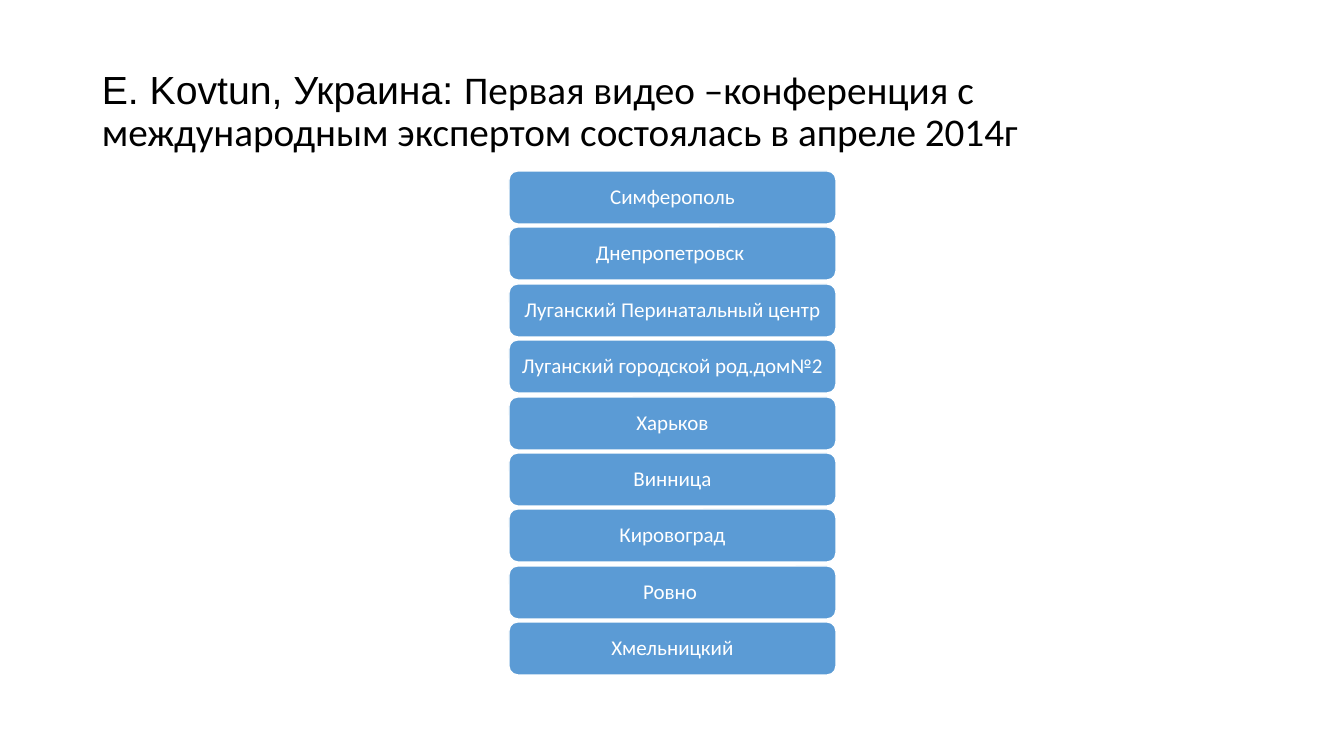
from dataclasses import dataclass

from pptx import Presentation
from pptx.dml.color import RGBColor
from pptx.enum.shapes import MSO_SHAPE
from pptx.enum.text import MSO_ANCHOR as Anchor, PP_ALIGN as Align
from pptx.util import Emu, Pt

PX_PER_INCH = 100.8
BLACK, WHITE, BLUE = "000000", "FFFFFF", "5B9BD5"

# Stack of city bars: the first and last tops fix the spacing
BAR_LEFT, BAR_WIDTH, BAR_HEIGHT = 509, 327, 53
FIRST_TOP, LAST_TOP = 171, 622

CITIES = [
    "Симферополь",
    "Днепропетровск ",
    "Луганский Перинатальный центр",
    "Луганский городской род.дом№2",
    "Харьков",
    "Винница",
    "Кировоград",
    "Ровно ",
    "Хмельницкий",
]


@dataclass
class Span:
    text: str
    font: str
    size: int
    color: str


@dataclass
class CityBar:
    label: str
    top: int


TITLE = [
    Span("E. Kovtun, Украина: ", "Arial", 28, BLACK),
    Span("Первая видео –конференция с международным экспертом "
         "состоялась в апреле 2014г", "Calibri", 28, BLACK),
]


def px(length: int) -> Emu:
    return Emu(round(length * 914400 / PX_PER_INCH))


def rgb(code: str) -> RGBColor:
    return RGBColor.from_string(code)


def write(frame, spans: list[Span], align: Align) -> None:
    frame.word_wrap = True
    frame.vertical_anchor = Anchor.MIDDLE
    para = frame.paragraphs[0]
    para.alignment = align
    para.line_spacing = 0.9
    for span in spans:
        run = para.add_run()
        run.text = span.text
        run.font.name = span.font
        run.font.size = Pt(span.size)
        run.font.color.rgb = rgb(span.color)


def draw_title(page) -> None:
    box = page.shapes.add_textbox(px(92), px(40), px(1159), px(146))
    write(box.text_frame, TITLE, Align.LEFT)


def draw_bar(page, bar: CityBar) -> None:
    box = page.shapes.add_shape(MSO_SHAPE.ROUNDED_RECTANGLE, px(BAR_LEFT),
                                px(bar.top), px(BAR_WIDTH), px(BAR_HEIGHT))
    box.shadow.inherit = False
    box.fill.solid()
    box.fill.fore_color.rgb = rgb(BLUE)
    box.line.color.rgb = rgb(WHITE)
    box.line.width = Pt(1)
    frame = box.text_frame
    frame.margin_left = frame.margin_right = px(6)
    frame.margin_top = frame.margin_bottom = px(3)
    write(frame, [Span(bar.label, "Calibri", 15, WHITE)], Align.CENTER)


def main() -> None:
    deck = Presentation()
    deck.slide_width, deck.slide_height = px(1344), px(756)
    page = deck.slides.add_slide(deck.slide_layouts[6])

    # Heading
    draw_title(page)

    # City bars, evenly spaced
    pitch = (LAST_TOP - FIRST_TOP) / (len(CITIES) - 1)
    for index, city in enumerate(CITIES):
        draw_bar(page, CityBar(city, FIRST_TOP + round(index * pitch)))

    deck.save("out.pptx")


if __name__ == "__main__":
    main()
